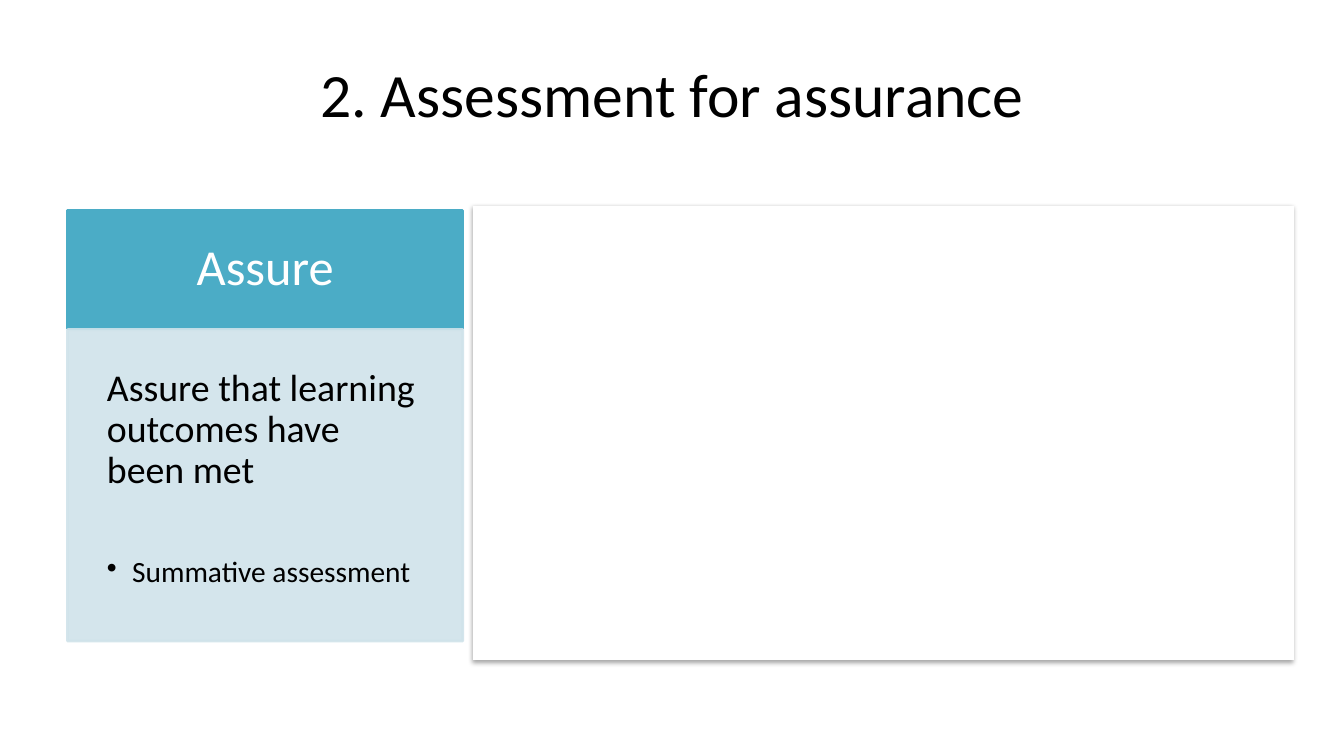
from lxml import etree
from pptx import Presentation
from pptx.dml.color import RGBColor
from pptx.enum import shapes, text
from pptx.oxml import parse_xml
from pptx.oxml.ns import nsdecls, qn
from pptx.util import Inches, Pt

# Content
TITLE = "2. Assessment for assurance"
HEADING = "Assure"
AIM = "Assure that learning outcomes have been met"
EXAMPLE = "Summative assessment"

FONT = "Calibri"
COLORS = {"teal": "4BACC6", "pale": "D0E3EA", "white": "FFFFFF", "black": "000000"}

# Layout in inches
COLUMN_LEFT, COLUMN_WIDTH = 0.67, 3.92
HEADING_BOX = (COLUMN_LEFT, 2.09, COLUMN_WIDTH, 1.17)
BODY_BOX = (COLUMN_LEFT, 3.27, COLUMN_WIDTH, 3.09)
PANEL_BOX = (4.69, 2.04, 8.14, 4.51)


def add_box(slide, kind, box, color, outlined=True):
    sp = slide.shapes.add_shape(kind, *map(Inches, box))
    sp.shadow.inherit = False
    sp.fill.solid()
    sp.fill.fore_color.rgb = RGBColor.from_string(COLORS[color])
    if outlined:
        sp.line.color.rgb = RGBColor.from_string(COLORS[color])
        sp.line.width = Pt(2)
    else:
        sp.line.fill.background()
    return sp


def set_frame(sp, inset, anchor):
    tf = sp.text_frame
    tf.word_wrap = True
    tf.vertical_anchor = anchor
    tf.margin_left = tf.margin_right = tf.margin_top = tf.margin_bottom = Inches(inset)
    return tf


def write(p, words, size, color="black", align=text.PP_ALIGN.LEFT, spacing=0.9):
    p.alignment = align
    p.line_spacing = spacing
    r = p.add_run()
    r.text = words
    r.font.name = FONT
    r.font.size = Pt(size)
    r.font.color.rgb = RGBColor.from_string(COLORS[color])


prs = Presentation()
prs.slide_width, prs.slide_height = Inches(13.33), Inches(7.5)
slide = prs.slides.add_slide(prs.slide_layouts[5])

# Title
title = slide.shapes.title
title.left, title.top, title.width, title.height = map(Inches, (0.67, 0.3, 12, 1.25))
title.text_frame.vertical_anchor = text.MSO_ANCHOR.MIDDLE
write(title.text_frame.paragraphs[0], TITLE, 44, align=text.PP_ALIGN.CENTER, spacing=1.0)

# Column heading
rect = shapes.MSO_SHAPE.RECTANGLE
heading = add_box(slide, rect, HEADING_BOX, "teal")
tf = set_frame(heading, 0.31, text.MSO_ANCHOR.MIDDLE)
write(tf.paragraphs[0], HEADING, 36, "white", text.PP_ALIGN.CENTER)

# Column body, 90% opaque
body = add_box(slide, rect, BODY_BOX, "pale")
for clr in body._element.spPr.iter(qn("a:srgbClr")):
    etree.SubElement(clr, qn("a:alpha"), val="90000")
tf = set_frame(body, 0.39, text.MSO_ANCHOR.TOP)
write(tf.paragraphs[0], AIM, 27)

# Bulleted example
p = tf.add_paragraph()
p.level = 1
p.space_before = Pt(47)
write(p, EXAMPLE, 21)
pPr = p._p.get_or_add_pPr()
pPr.set("marL", str(Inches(0.25)))
pPr.set("indent", str(-Inches(0.25)))
etree.SubElement(pPr, qn("a:buChar"), char="•")

# Blank panel with a soft shadow below
panel = add_box(slide, shapes.MSO_SHAPE.FLOWCHART_PROCESS, PANEL_BOX, "white", outlined=False)
panel._element.spPr.find(qn("a:effectLst")).append(parse_xml(
    f'<a:outerShdw {nsdecls("a")} blurRad="{Pt(3.1)}" dist="{Pt(1.8)}" dir="5400000" rotWithShape="0">'
    f'<a:srgbClr val="{COLORS["black"]}"><a:alpha val="35000"/></a:srgbClr></a:outerShdw>'))

prs.save("out.pptx")
